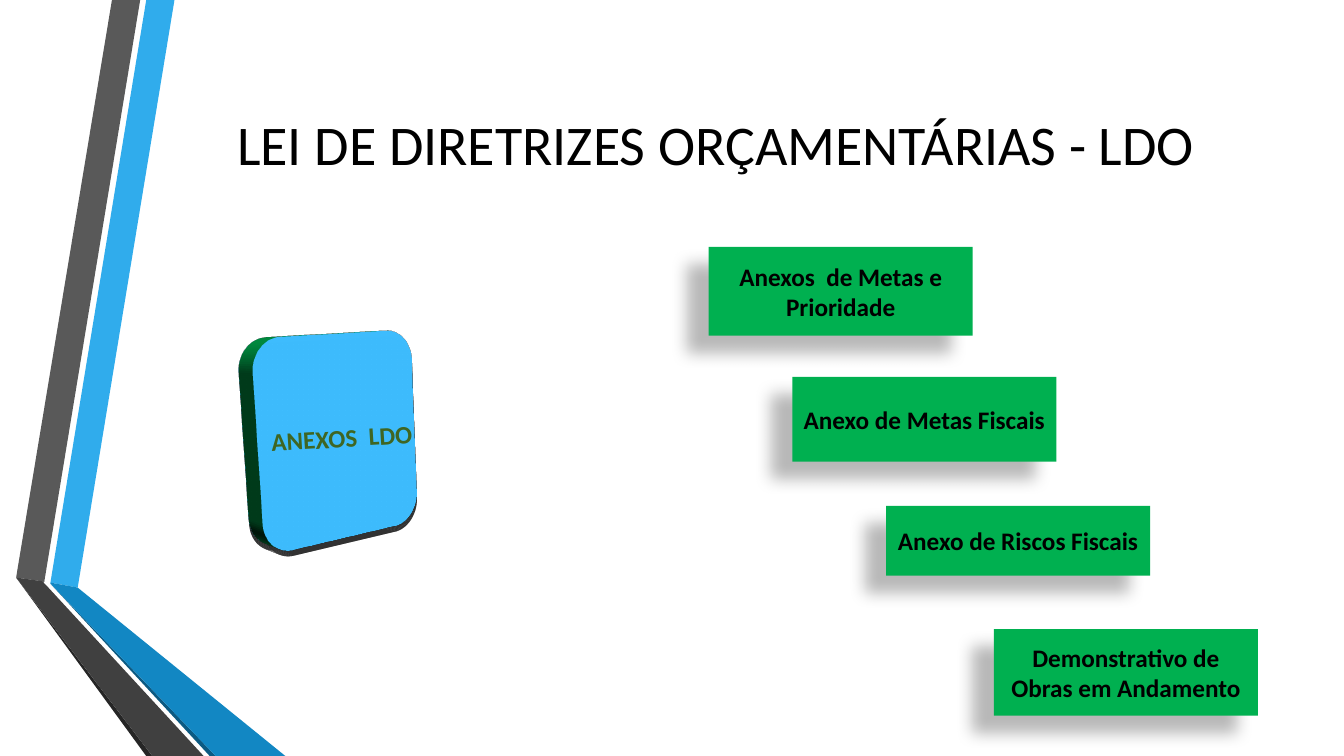
from dataclasses import dataclass

from lxml.etree import SubElement
from pptx import Presentation
from pptx.dml.color import RGBColor
from pptx.enum.shapes import MSO_SHAPE
from pptx.enum.text import MSO_ANCHOR, MSO_AUTO_SIZE, PP_ALIGN
from pptx.oxml.ns import qn
from pptx.shapes.autoshape import Shape
from pptx.slide import Slide
from pptx.text.text import TextFrame
from pptx.util import Emu, Inches, Pt

WIDE = Inches(13.33)
HIGH = Inches(7.5)
GREEN = "00B050"
BLUE = "30ACEC"


@dataclass
class Band:
    """A ribbon outline, its points in percent of the slide."""
    fill: str
    dots: list[tuple[float, float]]


@dataclass
class Shade:
    """A black outer shadow in percent, points and degrees."""
    alpha: int
    blur: float
    dist: float
    angle: int


@dataclass
class Box:
    """A labelled shape placed in percent of the slide."""
    text: str
    left: float
    top: float
    wide: float
    high: float


BANDS = [
    Band(BLUE, [(3.75, 77.07), (5.78, 77.73), (12.98, 0), (10.88, 0)]),
    Band("595959", [(10.43, 0), (8.33, 0), (1.2, 76.4), (3.3, 76.93)]),
    Band("262626", [(1.2, 76.4), (10.88, 100), (11.33, 100)]),
    Band("0C5A82", [(3.75, 77.2), (15.6, 100), (16.05, 100)]),
    Band("1287C3", [(3.75, 77.2), (16.05, 100), (21.23, 100),
                    (5.78, 77.73), (3.75, 77.07)]),
    Band("404040", [(15.15, 100), (3.6, 77.73), (3.23, 77.07),
                    (3.3, 76.93), (1.2, 76.4), (11.33, 100)]),
]
HEAD = Box("LEI DE DIRETRIZES ORÇAMENTÁRIAS - LDO", 12.15, 10, 82.2, 25.6)
BLOCK = Box("ANEXOS  LDO", 18.38, 44.27, 14.1, 27.2)
STEPS = [
    Box("Anexos  de Metas e Prioridade", 52.73, 32.67, 19.65, 11.73),
    Box("Anexo de Metas Fiscais", 58.95, 49.87, 19.65, 11.2),
    Box("Anexo de Riscos Fiscais", 65.93, 66.93, 19.65, 9.2),
    Box("Demonstrativo de Obras em Andamento", 73.95, 83.2, 19.65, 11.47),
]


def paint(code: str) -> RGBColor:
    """Turn a hex string into a colour."""
    return RGBColor.from_string(code)


def across(share: float) -> Emu:
    """Turn a percentage of the width into a length."""
    return Emu(round(WIDE * share / 100))


def down(share: float) -> Emu:
    """Turn a percentage of the height into a length."""
    return Emu(round(HIGH * share / 100))


def area(box: Box) -> tuple[Emu, Emu, Emu, Emu]:
    """Give left, top, width and height of a box."""
    return across(box.left), down(box.top), across(box.wide), down(box.high)


def write(frame: TextFrame, text: str, *, size: int = 18,
          color: str = "000000", bold: bool = False) -> None:
    """Fill a frame with one centred, formatted line of text."""
    frame.text = text
    frame.word_wrap = True
    frame.auto_size = MSO_AUTO_SIZE.NONE
    frame.vertical_anchor = MSO_ANCHOR.MIDDLE
    line = frame.paragraphs[0]
    line.alignment = PP_ALIGN.CENTER
    font = line.runs[0].font
    font.name = "Calibri"
    font.size = Pt(size)
    font.bold = bold
    font.color.rgb = paint(color)


def color_in(shape: Shape, fill: str) -> None:
    """Give a shape a plain fill, no line and no shadow."""
    shape.shadow.inherit = False
    shape.fill.solid()
    shape.fill.fore_color.rgb = paint(fill)
    shape.line.fill.background()


def cast(shape: Shape, shade: Shade) -> None:
    """Add an outer shadow to a shape."""
    root = shape.element.spPr.find(qn("a:effectLst"))
    glow = SubElement(root, qn("a:outerShdw"), {
        "blurRad": str(Pt(shade.blur)), "dist": str(Pt(shade.dist)),
        "dir": str(shade.angle * 60000), "algn": "ctr", "rotWithShape": "0"})
    tone = SubElement(glow, qn("a:srgbClr"), val="000000")
    SubElement(tone, qn("a:alpha"), val=str(shade.alpha * 1000))


def extrude(shape: Shape, depth: Emu, color: str) -> None:
    """Turn a shape into a solid seen in perspective."""
    root = shape.element.spPr
    scene = SubElement(root, qn("a:scene3d"))
    SubElement(scene, qn("a:camera"),
               prst="perspectiveHeroicExtremeRightFacing")
    SubElement(scene, qn("a:lightRig"), rig="threePt", dir="t")
    solid = SubElement(root, qn("a:sp3d"), extrusionH=str(depth))
    tone = SubElement(solid, qn("a:extrusionClr"))
    SubElement(tone, qn("a:srgbClr"), val=color)


def draw_band(slide: Slide, band: Band) -> None:
    """Draw one ribbon."""
    dots = [(across(x), down(y)) for x, y in band.dots]
    pen = slide.shapes.build_freeform(*dots[0], scale=1.0)
    pen.add_line_segments(dots[1:], close=True)
    color_in(pen.convert_to_shape(), band.fill)


def draw_box(slide: Slide, box: Box, kind: MSO_SHAPE, fill: str,
             color: str, shade: Shade) -> Shape:
    """Draw one labelled shape with its shadow."""
    shape = slide.shapes.add_shape(kind, *area(box))
    color_in(shape, fill)
    cast(shape, shade)
    write(shape.text_frame, box.text, color=color, bold=True)
    return shape


def draw_head(slide: Slide) -> None:
    """Place and format the title."""
    title = slide.shapes.title
    title.left, title.top, title.width, title.height = area(HEAD)
    write(title.text_frame, HEAD.text, size=40)
    title.text_frame.margin_bottom = down(8.4)


def main() -> None:
    """Build and save the slide."""
    deck = Presentation()
    deck.slide_width, deck.slide_height = WIDE, HIGH
    slide = deck.slides.add_slide(deck.slide_layouts[5])
    for band in BANDS:
        draw_band(slide, band)
    draw_head(slide)
    block = draw_box(slide, BLOCK, MSO_SHAPE.ROUNDED_RECTANGLE, BLUE,
                     "3F6623", Shade(33, 17.8, 4, 87))
    block.line.color.rgb = paint(GREEN)
    block.line.width = Pt(1.25)
    extrude(block, Pt(20), GREEN)
    for step in STEPS:
        draw_box(slide, step, MSO_SHAPE.RECTANGLE, GREEN, "000000",
                 Shade(28, 11.8, 19.7, 141))
    deck.save("out.pptx")


if __name__ == "__main__":
    main()
